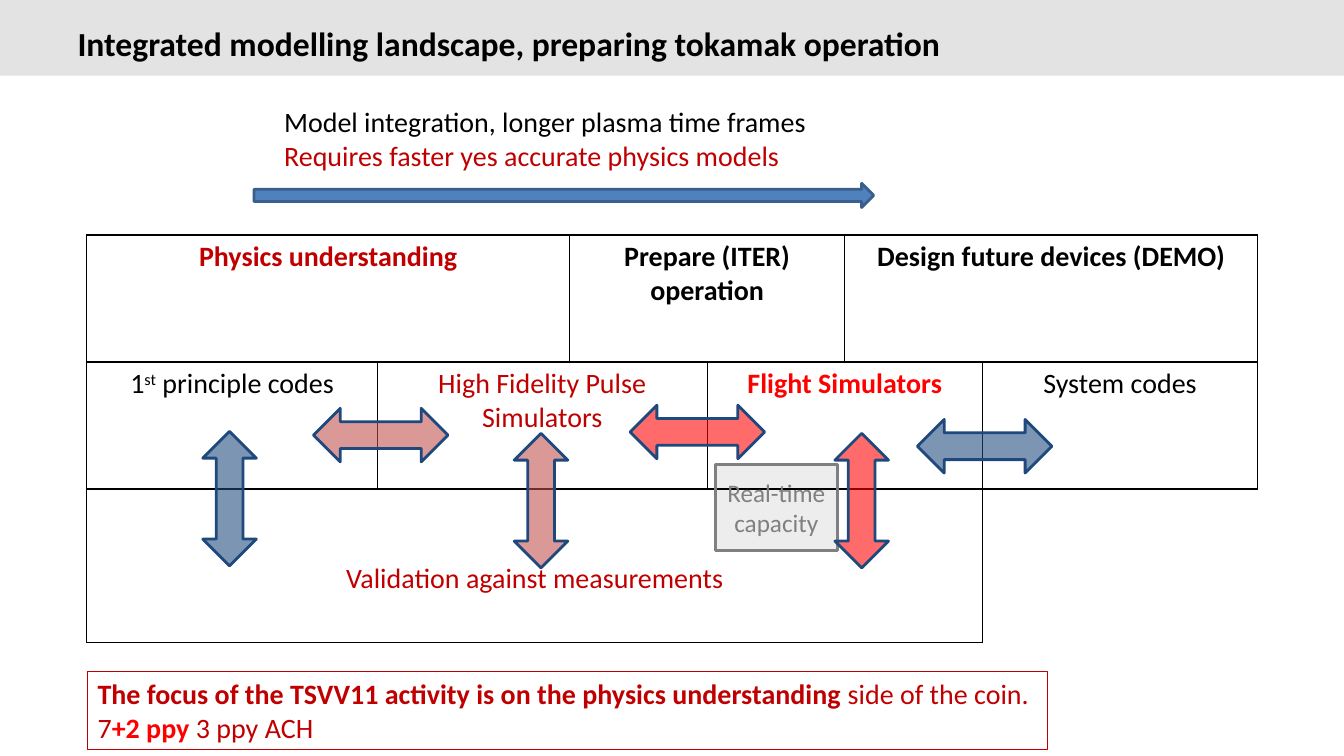
from dataclasses import dataclass
from typing import Optional

from pptx import Presentation
from pptx.dml.color import RGBColor
from pptx.enum.shapes import MSO_SHAPE
from pptx.enum.text import MSO_ANCHOR, MSO_AUTO_SIZE, PP_ALIGN
from pptx.oxml.ns import qn
from pptx.util import Cm, Pt
from lxml.etree import SubElement

COLOURS = {
    "black": "000000",
    "band": "E3E3E3",
    "grey": "808080",
    "crimson": "C00000",
    "red": "FF0000",
    "brick": "C0504D",
    "navy": "1F497D",
    "blue": "4F81BD",
    "steel": "3A5F8C",
}


@dataclass(frozen=True)
class Span:
    text: str
    colour: str = "black"
    bold: bool = False
    raised: bool = False


@dataclass(frozen=True)
class Entry:
    row: int
    first: int
    last: int
    spans: tuple[Span, ...]


@dataclass(frozen=True)
class DoubleArrow:
    left: float
    top: float
    colour: str
    rotation: int = 0


COLUMNS = (7.32, 4.84, 3.47, 3.47, 3.47, 6.93)
ROWS = (3.2, 3.2, 3.87)
ENTRIES = (
    Entry(0, 0, 1, (Span("Physics understanding", "crimson", True),)),
    Entry(0, 2, 3, (Span("Prepare (ITER) operation", bold=True),)),
    Entry(0, 4, 5, (Span("Design future devices (DEMO)", bold=True),)),
    Entry(1, 0, 0, (Span("1"), Span("st", raised=True), Span(" principle codes"))),
    Entry(1, 1, 2, (Span("High Fidelity Pulse Simulators", "crimson"),)),
    Entry(1, 3, 4, (Span("Flight Simulators", "red", True),)),
    Entry(1, 5, 5, (Span("System codes"),)),
    Entry(2, 0, 4, (Span("Validation against measurements", "crimson"),)),
)
DOUBLE_ARROWS = (
    DoubleArrow(23.12, 10.57, "navy"),
    DoubleArrow(4.09, 11.89, "navy", 90),
    DoubleArrow(20.02, 11.94, "red", 90),
    DoubleArrow(7.9, 10.29, "brick"),
    DoubleArrow(15.88, 10.21, "red"),
    DoubleArrow(11.94, 11.94, "brick", 90),
)


def rgb(name: str) -> RGBColor:
    return RGBColor.from_string(COLOURS[name])


def write_text(frame, *lines: tuple[Span, ...], size: float = 20,
               align=PP_ALIGN.LEFT, anchor=None, spacing=None, wrap: bool = True) -> None:
    frame.word_wrap = wrap
    if anchor is not None:
        frame.vertical_anchor = anchor
    if not wrap:
        frame.auto_size = MSO_AUTO_SIZE.SHAPE_TO_FIT_TEXT
    for index, line in enumerate(lines):
        para = frame.add_paragraph() if index else frame.paragraphs[0]
        para.alignment = align
        if spacing is not None:
            para.line_spacing = spacing
        for span in line:
            run = para.add_run()
            run.text = span.text
            run.font.name = "Calibri"
            run.font.size = Pt(size)
            run.font.bold = span.bold
            run.font.color.rgb = rgb(span.colour)
            if span.raised:
                run.font._element.set("baseline", "30000")


def add_box(page, kind, left: float, top: float, width: float, height: float,
            fill: Optional[str] = None, line: Optional[str] = None,
            weight: float = 2, opacity: int = 100):
    box = page.shapes.add_shape(kind, Cm(left), Cm(top), Cm(width), Cm(height))
    box.shadow.inherit = False
    if fill:
        box.fill.solid()
        box.fill.fore_color.rgb = rgb(fill)
        if opacity < 100:
            colour = box._element.spPr.find(qn("a:solidFill"))[0]
            SubElement(colour, qn("a:alpha")).set("val", str(opacity * 1000))
    else:
        box.fill.background()
    if line:
        box.line.color.rgb = rgb(line)
        box.line.width = Pt(weight)
    else:
        box.line.fill.background()
    return box


def set_borders(cell, sides: str) -> None:
    properties = cell._tc.get_or_add_tcPr()
    for side in "LRTB":
        border = SubElement(properties, qn(f"a:ln{side}"))
        border.set("w", str(Pt(1)))
        if side in sides:
            fill = SubElement(border, qn("a:solidFill"))
            SubElement(fill, qn("a:srgbClr")).set("val", COLOURS["black"])
        else:
            SubElement(border, qn("a:noFill"))


def add_landscape(page) -> None:
    table = page.shapes.add_table(len(ROWS), len(COLUMNS), Cm(2.19), Cm(5.92),
                                  Cm(sum(COLUMNS)), Cm(sum(ROWS))).table
    table.first_row = False
    table.horz_banding = False
    for column, width in zip(table.columns, COLUMNS):
        column.width = Cm(width)
    for row, height in zip(table.rows, ROWS):
        row.height = Cm(height)
    outside = table.cell(len(ROWS) - 1, len(COLUMNS) - 1)
    for cell in table.iter_cells():
        set_borders(cell, "LT" if cell == outside else "LRTB")
        cell.fill.background()
    for entry in ENTRIES:
        cell = table.cell(entry.row, entry.first)
        if entry.last > entry.first:
            cell.merge(table.cell(entry.row, entry.last))
        write_text(cell.text_frame, entry.spans, align=PP_ALIGN.CENTER)
    table.cell(2, 0).margin_top = Cm(1.84)


def main() -> None:
    deck = Presentation()
    deck.slide_width, deck.slide_height = Cm(33.87), Cm(19.05)
    page = deck.slides.add_slide(deck.slide_layouts[5])

    title = page.shapes.title
    title.left, title.top, title.width, title.height = Cm(1.7), Cm(0.2), Cm(27.94), Cm(1.27)
    write_text(title.text_frame,
               (Span("Integrated modelling landscape, preparing tokamak operation", bold=True),),
               size=24, anchor=MSO_ANCHOR.MIDDLE, spacing=Pt(42.7))
    band = add_box(page, MSO_SHAPE.RECTANGLE, 0, 0, 33.87, 1.91, "band")
    title._element.addprevious(band._element)

    add_landscape(page)

    capacity = add_box(page, MSO_SHAPE.RECTANGLE, 18.03, 11.71, 3.07, 2.16,
                       "black", "grey", opacity=7)
    write_text(capacity.text_frame, (Span("Real-time capacity", "grey"),), size=18,
               align=PP_ALIGN.CENTER, anchor=MSO_ANCHOR.MIDDLE)

    for arrow in DOUBLE_ARROWS:
        shape = add_box(page, MSO_SHAPE.LEFT_RIGHT_ARROW, arrow.left, arrow.top, 3.39, 1.35,
                        arrow.colour, "navy", opacity=58)
        shape.rotation = arrow.rotation

    trend = page.shapes.add_textbox(Cm(6.91), Cm(2.51), Cm(13.82), Cm(1.96))
    write_text(trend.text_frame,
               (Span("Model integration, longer plasma time frames"),),
               (Span("Requires faster yes accurate physics models", "crimson"),), wrap=False)
    add_box(page, MSO_SHAPE.RIGHT_ARROW, 6.4, 4.62, 15.62, 0.61, "blue", "steel")

    focus = add_box(page, MSO_SHAPE.RECTANGLE, 2.21, 16.92, 24.18, 1.96,
                    line="crimson", weight=0.75)
    write_text(focus.text_frame,
               (Span("The focus of the TSVV11 activity is on the physics understanding ",
                     "crimson", True), Span("side of the coin.", "crimson")),
               (Span("7", "crimson"), Span("+2 ppy ", "red", True),
                Span("3 ppy ACH", "crimson")),
               anchor=MSO_ANCHOR.TOP, wrap=False)

    deck.save("out.pptx")


if __name__ == "__main__":
    main()
